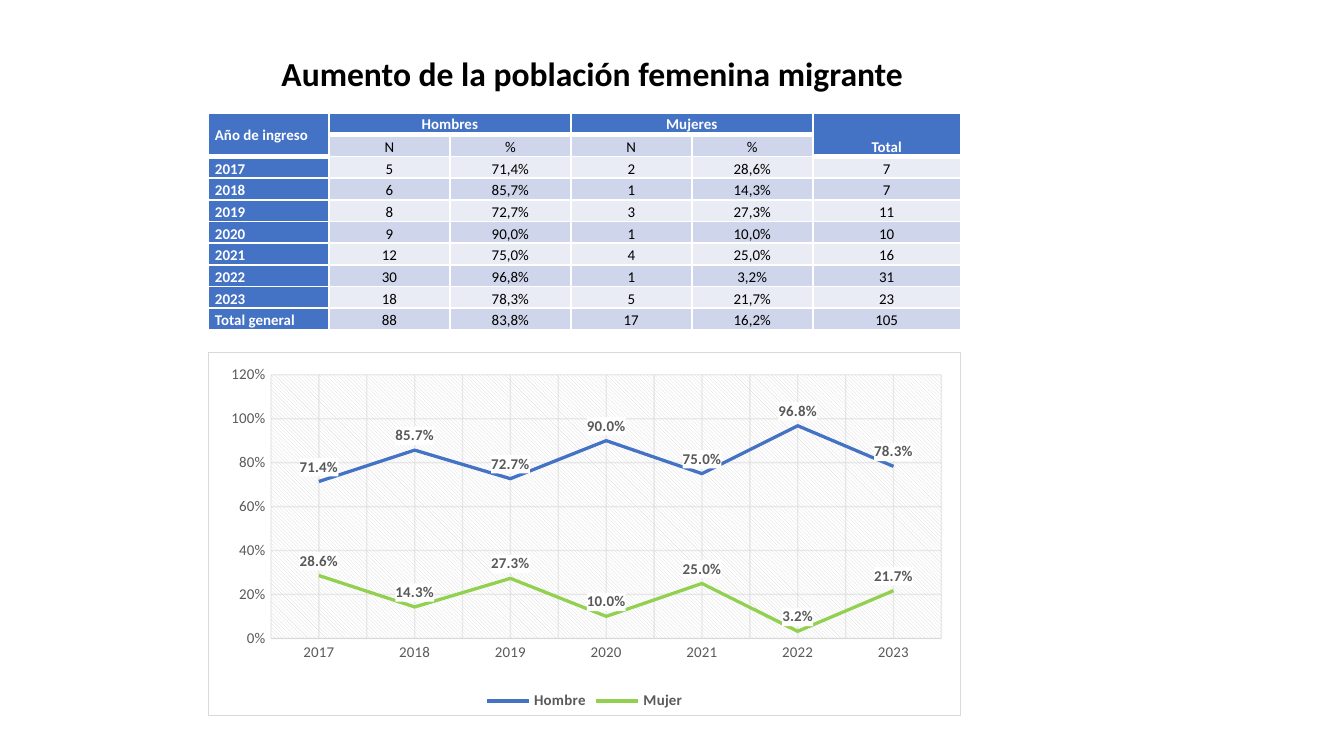
from copy import deepcopy
from dataclasses import dataclass

from lxml.etree import _Element as Node
from pptx import Presentation
from pptx.chart.chart import Chart
from pptx.chart.data import CategoryChartData
from pptx.dml.color import RGBColor
from pptx.enum.chart import XL_CHART_TYPE, XL_LABEL_POSITION, XL_LEGEND_POSITION, XL_TICK_MARK
from pptx.enum.text import MSO_ANCHOR, PP_ALIGN
from pptx.oxml import parse_xml
from pptx.oxml.ns import nsdecls, qn
from pptx.slide import Slide
from pptx.table import Table, _Cell as Cell
from pptx.util import Emu, Pt

SCALE = 6804
FONT = "Calibri"
BLUE, GREEN, WHITE, BLACK = "4472C4", "92D050", "FFFFFF", "000000"
GRAY, RULE = "595959", "D9D9D9"
BANDS = ("E9EBF5", "CFD5EA")


@dataclass
class Row:
    label: str
    cells: tuple[str, ...]


@dataclass
class Head:
    text: str
    row: int
    col: int
    down: int
    across: int
    anchor: MSO_ANCHOR
    align: PP_ALIGN


@dataclass
class Line:
    name: str
    col: int
    color: str


HEADS = (
    Head("Año de ingreso", 0, 0, 2, 1, MSO_ANCHOR.MIDDLE, PP_ALIGN.LEFT),
    Head("Hombres", 0, 1, 1, 2, MSO_ANCHOR.MIDDLE, PP_ALIGN.CENTER),
    Head("Mujeres", 0, 3, 1, 2, MSO_ANCHOR.MIDDLE, PP_ALIGN.CENTER),
    Head("Total", 0, 5, 2, 1, MSO_ANCHOR.BOTTOM, PP_ALIGN.CENTER),
)
YEARS = (
    Row("2017", ("5", "71,4%", "2", "28,6%", "7")),
    Row("2018", ("6", "85,7%", "1", "14,3%", "7")),
    Row("2019", ("8", "72,7%", "3", "27,3%", "11")),
    Row("2020", ("9", "90,0%", "1", "10,0%", "10")),
    Row("2021", ("12", "75,0%", "4", "25,0%", "16")),
    Row("2022", ("30", "96,8%", "1", "3,2%", "31")),
    Row("2023", ("18", "78,3%", "5", "21,7%", "23")),
)
TOTAL = Row("Total general", ("88", "83,8%", "17", "16,2%", "105"))
LINES = (Line("Hombre", 1, BLUE), Line("Mujer", 3, GREEN))


def px(n: int) -> Emu:
    return Emu(n * SCALE)


def rgb(code: str) -> RGBColor:
    return RGBColor.from_string(code)


def style(font, size: int, color: str, bold: bool = False) -> None:
    font.name, font.size, font.bold = FONT, Pt(size), bold
    font.color.rgb = rgb(color)


def share(text: str) -> float:
    return round(float(text.rstrip("%").replace(",", ".")) / 100, 3)


def add_title(slide: Slide) -> None:
    frame = slide.shapes.add_textbox(px(134), px(23), px(917), px(78)).text_frame
    frame.word_wrap = True
    frame.margin_top = px(30)
    line = frame.paragraphs[0]
    line.text = "Aumento de la población femenina migrante"
    line.alignment = PP_ALIGN.CENTER
    style(line.font, 18, BLACK, True)


def edge(cell: Cell, base: int = 1) -> None:
    props = cell._tc.get_or_add_tcPr()
    for side, width in (("L", 1), ("R", 1), ("T", 1), ("B", base)):
        props.append(parse_xml(
            f'<a:ln{side} {nsdecls("a")} w="{Pt(width)}"><a:solidFill>'
            f'<a:srgbClr val="{WHITE}"/></a:solidFill></a:ln{side}>'))


def fill_cell(cell: Cell, text: str, back: str, color: str = BLACK, bold: bool = False,
              align: PP_ALIGN = PP_ALIGN.CENTER, anchor: MSO_ANCHOR = MSO_ANCHOR.BOTTOM) -> None:
    cell.fill.solid()
    cell.fill.fore_color.rgb = rgb(back)
    cell.margin_left = cell.margin_right = px(7)
    cell.margin_top = cell.margin_bottom = 0
    cell.vertical_anchor = anchor
    line = cell.text_frame.paragraphs[0]
    line.text, line.alignment, line.line_spacing = text, align, 1.07
    style(line.font, 8, color, bold)


def add_head(table: Table, head: Head) -> None:
    cell = table.cell(head.row, head.col)
    last = table.cell(head.row + head.down - 1, head.col + head.across - 1)
    cell.merge(last)
    fill_cell(cell, head.text, BLUE, WHITE, True, head.align, head.anchor)


def add_grid(slide: Slide) -> None:
    body = (Row("", ("N", "%", "N", "%", "")), *YEARS, TOTAL)
    count = len(body) + 1
    table = slide.shapes.add_table(count, 6, px(208), px(113), px(753), px(217)).table
    for col in table.columns:
        col.width = px(121)
    table.columns[5].width = px(148)
    for row in table.rows:
        row.height = Emu(px(217) // count)
    for r in range(count):
        for c in range(6):
            edge(table.cell(r, c), 3 if r == 0 or (r == 1 and c in (0, 5)) else 1)
    for r, row in enumerate(body, 1):
        if row.label:
            fill_cell(table.cell(r, 0), row.label, BLUE, WHITE, True, PP_ALIGN.LEFT)
        for c, text in enumerate(row.cells, 1):
            if text:
                fill_cell(table.cell(r, c), text, BANDS[r % 2])
    for head in HEADS:
        add_head(table, head)


def solid(color: str) -> str:
    return f'<a:solidFill><a:srgbClr val="{color}"/></a:solidFill>'


def look(inner: str) -> Node:
    return parse_xml(f'<c:spPr {nsdecls("c", "a")}>{inner}</c:spPr>')


def set_axes(chart: Chart) -> None:
    for axis in (chart.category_axis, chart.value_axis):
        axis.major_tick_mark = axis.minor_tick_mark = XL_TICK_MARK.NONE
        style(axis.tick_labels.font, 8, GRAY)
        axis.has_major_gridlines = True
        grid = axis.major_gridlines.format.line
        grid.width, grid.color.rgb = Pt(0.75), rgb(RULE)
    for lines in chart.element.iter(qn("c:majorGridlines")):
        for tint in lines.iter(qn("a:srgbClr")):
            tint.append(parse_xml(f'<a:alpha {nsdecls("a")} val="54000"/>'))
    cats, vals = chart.category_axis, chart.value_axis
    cats.format.line.width, cats.format.line.color.rgb = Pt(0.75), rgb(RULE)
    cats.has_minor_gridlines = True
    minor = next(chart.element.iter(qn("c:minorGridlines")))
    major = next(chart.element.iter(qn("c:majorGridlines")))
    minor.append(deepcopy(major[0]))
    vals.format.line.fill.background()
    vals.minimum_scale, vals.maximum_scale, vals.major_unit = 0, 1.2, 0.2
    vals.tick_labels.number_format = "0%"
    vals.tick_labels.number_format_is_linked = False


def set_area(chart: Chart) -> None:
    area = next(chart.element.iter(qn("c:plotArea")))
    for old in area.findall(qn("c:layout")):
        area.remove(old)
    spots = "".join(f'<c:{k} val="{v}"/>' for k, v in (
        ("layoutTarget", "inner"), ("xMode", "edge"), ("yMode", "edge"),
        ("x", 0.083), ("y", 0.061), ("w", 0.892), ("h", 0.727)))
    area.insert(0, parse_xml(
        f'<c:layout {nsdecls("c")}><c:manualLayout>{spots}</c:manualLayout></c:layout>'))
    area.append(look(
        f'<a:pattFill prst="ltDnDiag"><a:fgClr><a:srgbClr val="{RULE}"/></a:fgClr>'
        f'<a:bgClr><a:srgbClr val="{WHITE}"/></a:bgClr></a:pattFill>'))
    chart.element.find(qn("c:txPr")).addprevious(
        look(f'{solid(WHITE)}<a:ln w="{Pt(0.75)}">{solid(RULE)}</a:ln>'))


def add_lines(slide: Slide) -> None:
    data = CategoryChartData(number_format="0.0%")
    data.categories = [row.label for row in YEARS]
    for line in LINES:
        data.add_series(line.name, [share(row.cells[line.col]) for row in YEARS])
    chart = slide.shapes.add_chart(
        XL_CHART_TYPE.LINE, px(208), px(352), px(753), px(364), data).chart
    style(chart.font, 10, BLACK)
    chart.has_title = False
    chart.has_legend = True
    chart.legend.position = XL_LEGEND_POSITION.BOTTOM
    chart.legend.include_in_layout = False
    style(chart.legend.font, 8, GRAY, True)
    chart.plots[0].vary_by_categories = False
    for line, ser in zip(LINES, chart.plots[0].series):
        ser.smooth = False
        ser.format.line.width, ser.format.line.color.rgb = Pt(1.75), rgb(line.color)
        tags = ser.data_labels
        tags.show_value, tags.position = True, XL_LABEL_POSITION.ABOVE
        style(tags.font, 8, GRAY, True)
    for text in chart.element.iter(qn("c:txPr")):
        if text.getparent().tag == qn("c:dLbls"):
            text.addprevious(look(solid(WHITE)))
    set_axes(chart)
    set_area(chart)


def main() -> None:
    deck = Presentation()
    deck.slide_width, deck.slide_height = px(1344), px(756)
    slide = deck.slides.add_slide(deck.slide_layouts[6])
    add_title(slide)
    add_grid(slide)
    add_lines(slide)
    deck.save("out.pptx")


if __name__ == "__main__":
    main()
